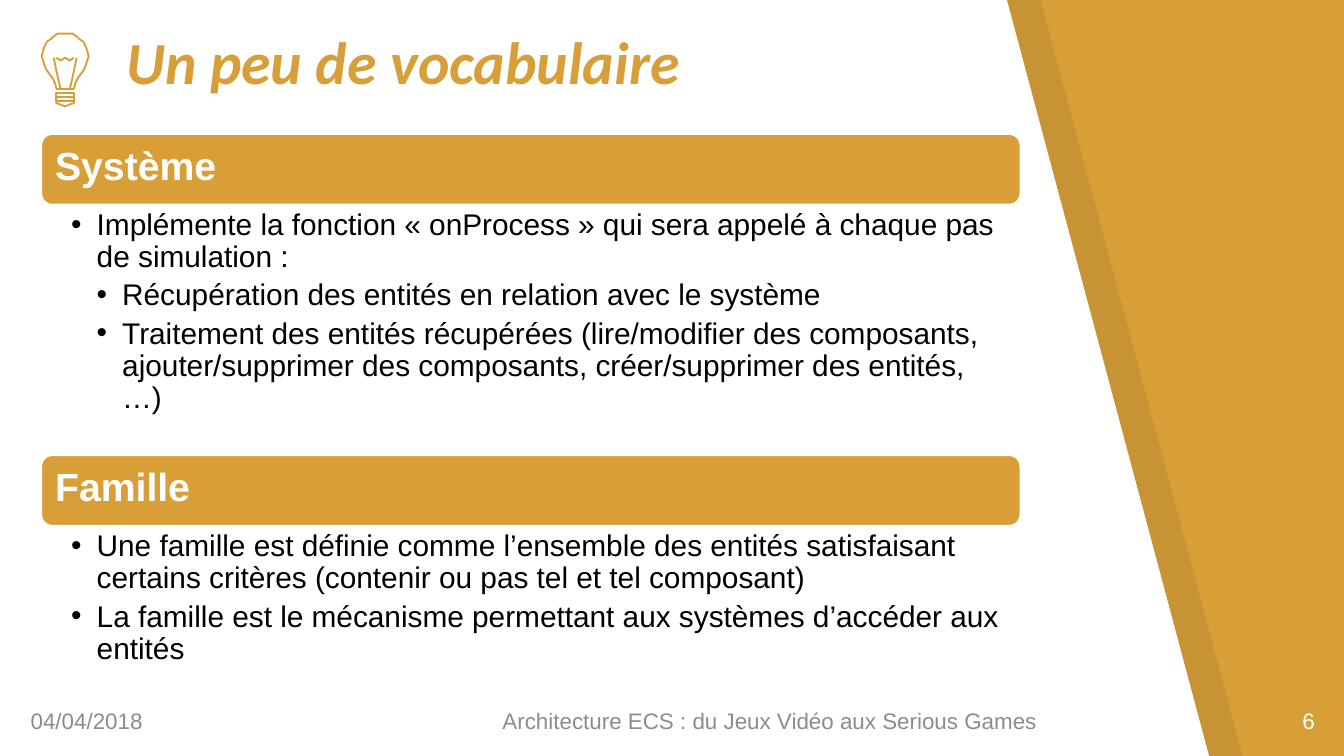
from dataclasses import dataclass

from lxml import etree
from pptx import Presentation
from pptx.dml.color import RGBColor
from pptx.enum import shapes, text
from pptx.oxml.ns import qn
from pptx.util import Inches, Pt


@dataclass(frozen=True)
class Theme:
    gold: str = "D89F39"
    white: str = "FFFFFF"
    black: str = "000000"
    grey: str = "8C8C8C"
    title_font: str = "Calibri"
    body_font: str = "Arial"
    title_size: float = 32
    heading_size: float = 21
    body_size: float = 16
    footer_size: float = 12


THEME = Theme()


@dataclass(frozen=True)
class Box:
    left: float
    top: float
    width: float
    height: float


@dataclass(frozen=True)
class Style:
    size: float
    color: str
    font: str = THEME.body_font
    bold: bool = False
    italic: bool = False


@dataclass(frozen=True)
class Bullet:
    wording: str
    level: int = 1


@dataclass(frozen=True)
class Section:
    heading: str
    top: float
    body_height: float
    bullets: tuple[Bullet, ...]


Points = list[tuple[float, float]]
BAR_LEFT, BAR_WIDTH, BAR_HEIGHT = 0.3, 7.3, 0.54
BULLET_INDENT = 0.19
BULB_AXIS = 0.485

SECTIONS = (
    Section("Système", 0.99, 1.85, (
        Bullet("Implémente la fonction «\u00a0onProcess\u00a0» qui sera appelé à chaque pas de simulation :"),
        Bullet("Récupération des entités en relation avec le système", 2),
        Bullet("Traitement des entités récupérées (lire/modifier des composants, "
               "ajouter/supprimer des composants, créer/supprimer des entités, …)", 2),
    )),
    Section("Famille", 3.38, 1.05, (
        Bullet("Une famille est définie comme l’ensemble des entités satisfaisant "
               "certains critères (contenir ou pas tel et tel composant)"),
        Bullet("La famille est le mécanisme permettant aux systèmes d’accéder aux entités"),
    )),
)


def rgb(color: str) -> RGBColor:
    return RGBColor.from_string(color)


def style_paragraph(para, style: Style) -> None:
    for span in para.runs:
        font = span.font
        font.name, font.size = style.font, Pt(style.size)
        font.bold, font.italic = style.bold, style.italic
        font.color.rgb = rgb(style.color)


def add_text(page, box: Box, lines: list[str], style: Style,
             anchor=text.MSO_ANCHOR.MIDDLE, insets=(0.1, 0.05, 0.1, 0.05)):
    """Insets run left, top, right, bottom."""
    shape = page.shapes.add_textbox(*map(Inches, (box.left, box.top, box.width, box.height)))
    frame = shape.text_frame
    frame.word_wrap = True
    frame.vertical_anchor = anchor
    (frame.margin_left, frame.margin_top,
     frame.margin_right, frame.margin_bottom) = map(Inches, insets)
    frame.text = "\n".join(lines)
    for para in frame.paragraphs:
        style_paragraph(para, style)
    return frame


def add_path(page, points: Points, closed: bool = False):
    (left, top), *rest = [(Inches(x), Inches(y)) for x, y in points]
    builder = page.shapes.build_freeform(left, top)
    builder.add_line_segments(rest, close=closed)
    shape = builder.convert_to_shape()
    shape.shadow.inherit = False
    return shape


def add_panel(page, left: float, color: str, opacity: int = 100) -> None:
    """Slanted panel whose right edge leans across the full height of the page."""
    outline = [(left, -0.01), (left, 5.64), (left + 9, 5.64), (left + 7.49, -0.01)]
    panel = add_path(page, outline, closed=True)
    panel.fill.solid()
    panel.fill.fore_color.rgb = rgb(color)
    panel.line.fill.background()
    if opacity < 100:
        tint = panel._element.spPr.find(".//" + qn("a:srgbClr"))
        etree.SubElement(tint, qn("a:alpha"), val=str(opacity * 1000))


def add_stroke(page, points: Points, closed: bool = False) -> None:
    stroke = add_path(page, points, closed)
    stroke.fill.background()
    stroke.line.color.rgb = rgb(THEME.gold)
    stroke.line.width = Pt(1)


def mirrored(points: Points) -> Points:
    return [(2 * BULB_AXIS - x, y) for x, y in points]


def add_bulb(page) -> None:
    left, right = 0.42, 0.55
    for top in (0.69, 0.72):
        add_stroke(page, [(left, top), (right, top), (right, top + 0.03), (left, top + 0.03)], True)
    cap = [(0.42, 0.75), (0.42, 0.77), (0.43, 0.77), (0.48, 0.79)]
    add_stroke(page, cap + mirrored(cap)[::-1], True)
    glass = [(0.55, 0.66), (0.56, 0.62), (0.58, 0.58), (0.61, 0.54), (0.63, 0.51),
             (0.64, 0.48), (0.65, 0.45), (0.66, 0.42), (0.65, 0.38), (0.64, 0.35),
             (0.62, 0.31), (0.59, 0.29), (0.57, 0.27), (0.54, 0.25), (0.5, 0.25)]
    add_stroke(page, glass + mirrored(glass)[::-1])
    filament = [(0.57, 0.43), (0.55, 0.53), (0.52, 0.66)]
    add_stroke(page, filament)
    add_stroke(page, mirrored(filament))
    add_stroke(page, [(0.42, 0.43), (0.45, 0.45), (BULB_AXIS, 0.43), (0.52, 0.45), (0.55, 0.43)])
    neck = page.shapes.add_connector(
        shapes.MSO_CONNECTOR.STRAIGHT, *map(Inches, (left, 0.66, right, 0.66)))
    neck.line.color.rgb = rgb(THEME.gold)
    neck.line.width = Pt(1)
    etree.SubElement(neck._element.spPr, qn("a:effectLst"))


def set_bullet(para, level: int) -> None:
    para.level = level
    properties = para._p.get_or_add_pPr()
    properties.set("marL", str(Inches(BULLET_INDENT * level)))
    properties.set("indent", str(-Inches(BULLET_INDENT)))
    etree.SubElement(properties, qn("a:buFont"), typeface=THEME.body_font)
    etree.SubElement(properties, qn("a:buChar"), char="•")


def add_section(page, section: Section) -> None:
    bar = page.shapes.add_shape(
        shapes.MSO_SHAPE.ROUNDED_RECTANGLE,
        *map(Inches, (BAR_LEFT, section.top, BAR_WIDTH, BAR_HEIGHT)))
    bar.shadow.inherit = False
    bar.fill.solid()
    bar.fill.fore_color.rgb = rgb(THEME.gold)
    bar.line.color.rgb = rgb(THEME.white)
    bar.line.width = Pt(2)

    heading = add_text(page, Box(BAR_LEFT + 0.02, section.top + 0.02, 7.24, 0.48),
                       [section.heading], Style(THEME.heading_size, THEME.white, bold=True),
                       insets=(0.09,) * 4)
    heading.paragraphs[0].line_spacing = 0.9

    body = add_text(page, Box(BAR_LEFT, section.top + BAR_HEIGHT, BAR_WIDTH, section.body_height),
                    [bullet.wording for bullet in section.bullets],
                    Style(THEME.body_size, THEME.black),
                    text.MSO_ANCHOR.TOP, (0.23, 0.03, 0.16, 0.03))
    for para, bullet in zip(body.paragraphs, section.bullets):
        para.line_spacing = 0.9
        para.space_after = Pt(0.2 * THEME.body_size)
        set_bullet(para, bullet.level)


def main() -> None:
    deck = Presentation()
    deck.slide_width = Inches(10)
    deck.slide_height = deck.slide_width * 9 // 16
    page = deck.slides.add_slide(deck.slide_layouts[6])
    page.background.fill.solid()
    page.background.fill.fore_color.rgb = rgb(THEME.gold)

    add_panel(page, 0.25, THEME.black, opacity=7)
    add_panel(page, 0, THEME.white)
    add_text(page, Box(0.84, 0.29, 6.14, 0.53), ["Un peu de vocabulaire"],
             Style(THEME.title_size, THEME.gold, THEME.title_font, True, True),
             text.MSO_ANCHOR.BOTTOM, (0.1,) * 4)

    footer = Style(THEME.footer_size, THEME.grey)
    add_text(page, Box(0.13, 5.21, 2.66, 0.3), ["04/04/2018"], footer)
    add_text(page, Box(3.64, 5.21, 5.07, 0.3),
             ["Architecture ECS : du Jeux Vidéo aux Serious Games"], footer)
    number = add_text(page, Box(9.29, 5.21, 0.59, 0.3), ["6"],
                      Style(THEME.footer_size, THEME.white))
    number.paragraphs[0].alignment = text.PP_ALIGN.RIGHT

    for section in SECTIONS:
        add_section(page, section)
    add_bulb(page)
    deck.save("out.pptx")


if __name__ == "__main__":
    main()
